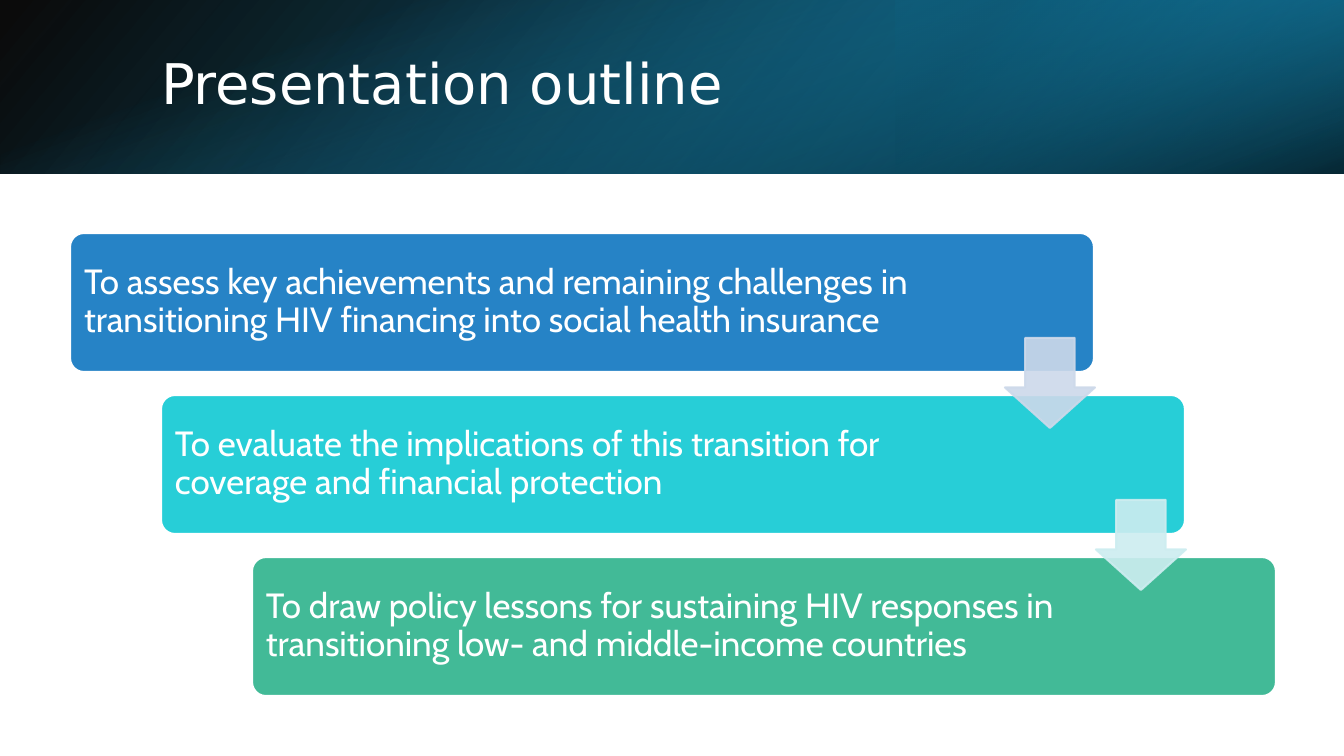
import pptx
import pptx.dml.color
import pptx.enum.shapes
import pptx.enum.text
import pptx.oxml
import pptx.oxml.ns
import pptx.util

EMU_PER_PX = 914400 / 100.8
SHAPES = pptx.enum.shapes.MSO_SHAPE
color = pptx.dml.color.RGBColor.from_string


def emu(*lengths):
    """Turn px lengths into EMU."""
    return [pptx.util.Emu(round(length * EMU_PER_PX)) for length in lengths]


deck = pptx.Presentation()
deck.slide_width, deck.slide_height = emu(1344, 756)
page = deck.slides.add_slide(deck.slide_layouts[6])

# Header band: three layered gradients; stops are (position, colour, opacity)
BAND_LAYERS = [
    ((0, 0, 1344, 174), 0, True, 140, [(0, "000000", 96), (100, "1482AC", 100)]),
    ((896, 0, 448, 174), 180, True, 320, [(19, "0E5772", 68), (100, "1CADE4", 79)]),
    ((585, -585, 174, 1344), 90, False, 340, [(23, "1CADE4", 0), (99, "000000", 74)]),
]
for frame, rotation, flipped, angle, stops in BAND_LAYERS:
    layer = page.shapes.add_shape(SHAPES.RECTANGLE, *emu(*frame))
    layer.rotation = rotation
    properties = layer._element.spPr
    if flipped:
        properties.xfrm.set("flipH", "1")
    stop_xml = "".join(
        f'<a:gs pos="{position * 1000}"><a:srgbClr val="{colour}">'
        f'<a:alpha val="{opacity * 1000}"/></a:srgbClr></a:gs>'
        for position, colour, opacity in stops
    )
    properties.append(pptx.oxml.parse_xml(
        f'<a:gradFill {pptx.oxml.ns.nsdecls("a")} rotWithShape="1"><a:gsLst>{stop_xml}</a:gsLst>'
        f'<a:lin ang="{angle * 60000}" scaled="0"/></a:gradFill>'
    ))
    layer.line.fill.background()
    layer.shadow.inherit = False

# Staircase of objectives
STEP_X, STEP_Y = 91, 162
OBJECTIVES = [
    ("2683C6", 874, "To assess key achievements and remaining challenges in "
                    "transitioning HIV financing into social health insurance"),
    ("27CED7", 836, "To evaluate the implications of this transition for "
                    "coverage and financial protection"),
    ("42BA97", 836, "To draw policy lessons for sustaining HIV responses in "
                    "transitioning low- and middle-income countries"),
]
texts = [((151, 38, 1107, 97), "Presentation outline", 5, {"name": "DejaVu Sans", "size": pptx.util.Pt(40)})]
for index, (colour, text_width, wording) in enumerate(OBJECTIVES):
    left, top = 70 + index * STEP_X, 233 + index * STEP_Y
    card = page.shapes.add_shape(SHAPES.ROUNDED_RECTANGLE, *emu(left, top, 1024, 139))
    card.adjustments[0] = 0.1
    card.fill.solid()
    card.fill.fore_color.rgb = color(colour)
    card.line.color.rgb = color("FFFFFF")
    card.line.width = pptx.util.Pt(1.5)
    card.shadow.inherit = False
    texts.append(((left + 4, top + 4, text_width, 131), wording, 10,
                  {"name": "Cabin", "size": pptx.util.Pt(25)}))

for frame, wording, inset, font in texts:
    box = page.shapes.add_textbox(*emu(*frame))
    body = box.text_frame
    body.word_wrap = True
    body.vertical_anchor = pptx.enum.text.MSO_ANCHOR.MIDDLE
    body.margin_left, body.margin_right, body.margin_top, body.margin_bottom = emu(10, 10, inset, inset)
    para = body.paragraphs[0]
    para.line_spacing = 0.9
    span = para.add_run()
    span.text = wording
    span.font.color.rgb = color("FFFFFF")
    for name, value in font.items():
        setattr(span.font, name, value)

# Translucent arrows from each objective to the next
for index, colour in enumerate(["CDD9EA", "CDEDF0"]):
    arrow = page.shapes.add_shape(
        SHAPES.DOWN_ARROW, *emu(1005 + index * STEP_X, 338 + index * STEP_Y, 90, 90))
    arrow.adjustments[0], arrow.adjustments[1] = 0.55, 0.45
    arrow.fill.solid()
    arrow.fill.fore_color.rgb = color(colour)
    arrow.line.color.rgb = color(colour)
    arrow.line.width = pptx.util.Pt(1.5)
    arrow.shadow.inherit = False
    for tint in list(arrow._element.spPr.iter(pptx.oxml.ns.qn("a:srgbClr"))):
        tint.append(pptx.oxml.parse_xml(f'<a:alpha {pptx.oxml.ns.nsdecls("a")} val="90000"/>'))

deck.save("out.pptx")
